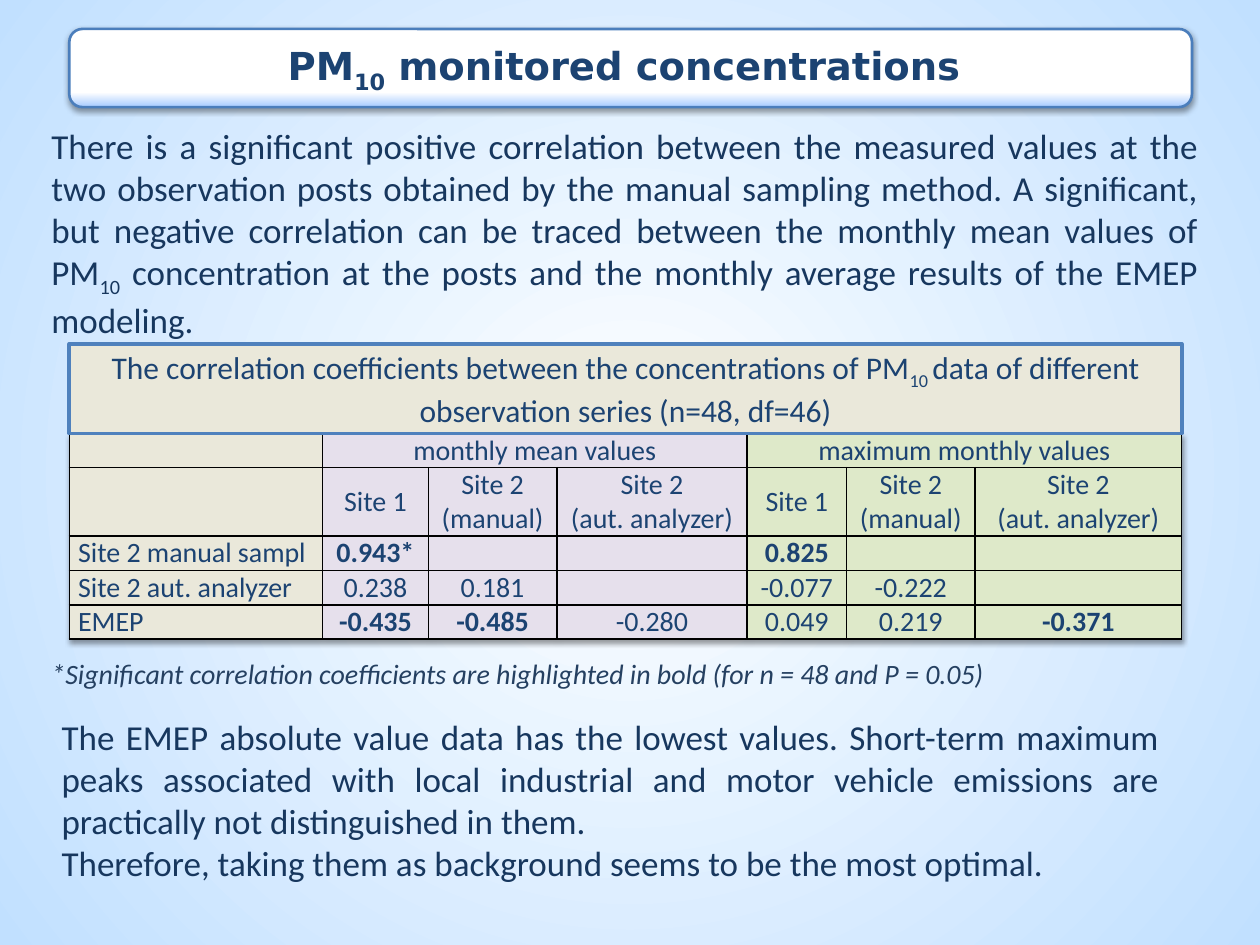
from lxml import etree
from pptx import Presentation
from pptx.dml.color import RGBColor
from pptx.enum.shapes import MSO_SHAPE as Shape
from pptx.enum.text import MSO_ANCHOR as Anchor, MSO_AUTO_SIZE as AutoSize, PP_ALIGN as Align
from pptx.oxml import parse_xml
from pptx.oxml.ns import nsdecls, qn
from pptx.util import Inches, Pt

NAVY, INK, NOTE = "1C4372", "17375E", "254061"
BEIGE, LILAC, GREEN = "EAE8DA", "E6E0EC", "DEE9C9"
COLUMN_FILLS = [BEIGE] + [LILAC] * 3 + [GREEN] * 3
COLUMN_WIDTHS = [2.01, 0.84, 1.02, 1.51, 0.79, 1.02, 1.64]
ROW_HEIGHTS = [0.27, 0.54, 0.27, 0.27, 0.27]
SITES = ["Site 1", "Site 2\n(manual)", "Site 2\n(aut. analyzer)"]
ROWS = [
    ["", "monthly mean values", "", "", "maximum monthly values", "", ""],
    [""] + SITES * 2,
    ["Site 2 manual sampl", "0.943*", "", "", "0.825", "", ""],
    ["Site 2 aut. analyzer", "0.238", "0.181", "", "-0.077", "-0.222", ""],
    ["EMEP", "-0.435", "-0.485", "-0.280", "0.049", "0.219", "-0.371"],
]
SIGNIFICANT = {"0.943*", "0.825", "-0.435", "-0.485", "-0.371"}


def rgb(value):
    """Turn a hex string into a colour."""
    return RGBColor.from_string(value)


def add_run(paragraph, text, size, color, font="Calibri", bold=False, italic=False, subscript=False):
    """Add one formatted run to a paragraph."""
    run = paragraph.add_run()
    run.text = text
    run.font.size, run.font.name = Pt(size), font
    run.font.bold, run.font.italic = bold, italic
    run.font.color.rgb = rgb(color)
    if subscript:
        run.font._element.set("baseline", "-25000")


def add_subscripted(paragraph, parts, *style, **options):
    """Add runs in which every second part is a subscript."""
    for index, part in enumerate(parts):
        add_run(paragraph, part, *style, subscript=index % 2 == 1, **options)


def fill_gradient(fill, stops):
    """Give a fill a gradient of two (position, colour) stops."""
    fill.gradient()
    for stop, (position, color) in zip(fill.gradient_stops, stops):
        stop.position, stop.color.rgb = position, rgb(color)


def soft_shadow():
    """Make a soft shadow that falls downwards."""
    return parse_xml(
        f'<a:effectLst {nsdecls("a")}><a:outerShdw blurRad="{Pt(3.1)}" dist="{Pt(1.6)}" '
        'dir="5400000" rotWithShape="0"><a:srgbClr val="000000"><a:alpha val="38000"/>'
        "</a:srgbClr></a:outerShdw></a:effectLst>")


def paint_background(slide):
    """Paint a glow that spreads from the middle of the slide."""
    fill_gradient(slide.background.fill, [(0, "FFFFFF"), (1, "C1E0FF")])
    linear = next(slide.element.iter(qn("a:lin")))
    glow = parse_xml(f'<a:path {nsdecls("a")} path="circle">'
                     '<a:fillToRect l="50000" t="50000" r="50000" b="50000"/></a:path>')
    linear.getparent().replace(linear, glow)


def add_panel(slide, kind, box, line_color, line_width):
    """Add an outlined shape with centred text and return it with its paragraph."""
    shape = slide.shapes.add_shape(kind, *map(Inches, box))
    shape.shadow.inherit = False
    shape.line.color.rgb, shape.line.width = rgb(line_color), Pt(line_width)
    shape.text_frame.word_wrap = True
    shape.text_frame.vertical_anchor = Anchor.MIDDLE
    paragraph = shape.text_frame.paragraphs[0]
    paragraph.alignment = Align.CENTER
    return shape, paragraph


def add_title(slide, box):
    """Add the rounded title bar."""
    shape, paragraph = add_panel(slide, Shape.ROUNDED_RECTANGLE, box, "4B7EBC", 1.5)
    fill_gradient(shape.fill, [(0, "A7CBFF"), (0.19, "FFFFFF")])
    shape.fill.gradient_angle = 90
    properties = shape.element.spPr
    properties.replace(properties.find(qn("a:effectLst")), soft_shadow())
    paragraph.line_spacing = 0.8
    add_subscripted(paragraph, ["PM", "10", " monitored concentrations "], 22, NAVY,
                    font="DejaVu Sans", bold=True)


def add_caption(slide, box):
    """Add the heading band of the table."""
    shape, paragraph = add_panel(slide, Shape.RECTANGLE, box, "4F81BD", 2)
    shape.fill.solid()
    shape.fill.fore_color.rgb = rgb(BEIGE)
    add_subscripted(paragraph, [
        "The correlation coefficients between the concentrations of PM", "10 ",
        "data of different observation series (n=48, df=46)"], 18, NAVY)


def add_text(slide, box, paragraphs, size, color, italic=False):
    """Add a text box from (alignment, parts) paragraphs."""
    frame = slide.shapes.add_textbox(*map(Inches, box)).text_frame
    frame.word_wrap, frame.auto_size = True, AutoSize.SHAPE_TO_FIT_TEXT
    for index, (alignment, parts) in enumerate(paragraphs):
        paragraph = frame.add_paragraph() if index else frame.paragraphs[0]
        paragraph.alignment = alignment
        add_subscripted(paragraph, parts, size, color, italic=italic)


def style_cell(cell, text, fill, alignment):
    """Write, fill and border one table cell."""
    cell.vertical_anchor = Anchor.MIDDLE
    cell.margin_left = cell.margin_right = Inches(0.07)
    cell.margin_top = cell.margin_bottom = 0
    for index, line in enumerate(text.split("\n")):
        frame = cell.text_frame
        paragraph = frame.add_paragraph() if index else frame.paragraphs[0]
        paragraph.alignment = alignment
        if line:
            add_run(paragraph, line, 16, NAVY, bold=line in SIGNIFICANT)
        else:
            etree.SubElement(paragraph._p, qn("a:endParaRPr"), sz="1600")
    properties = cell._tc.get_or_add_tcPr()
    for side in ("L", "R", "T", "B"):
        properties.append(parse_xml(
            f'<a:ln{side} {nsdecls("a")} w="{Pt(1)}"><a:solidFill>'
            f'<a:srgbClr val="000000"/></a:solidFill></a:ln{side}>'))
    cell.fill.solid()
    cell.fill.fore_color.rgb = rgb(fill)


def add_correlations(slide, box):
    """Add the table of correlation coefficients."""
    table = slide.shapes.add_table(len(ROWS), len(COLUMN_WIDTHS), *map(Inches, box)).table
    table.first_row = table.horz_banding = False
    table._tbl.tblPr.insert(0, soft_shadow())
    for column, width in zip(table.columns, COLUMN_WIDTHS):
        column.width = Inches(width)
    for row, height in zip(table.rows, ROW_HEIGHTS):
        row.height = Inches(height)
    for row, texts in enumerate(ROWS):
        for column, text in enumerate(texts):
            alignment = Align.CENTER if column else Align.LEFT
            style_cell(table.cell(row, column), text, COLUMN_FILLS[column], alignment)
    for start in (1, 4):
        table.cell(0, start).merge(table.cell(0, start + 2))


def main():
    """Build and save the slide."""
    presentation = Presentation()
    presentation.slide_width, presentation.slide_height = Inches(10), Inches(7.5)
    slide = presentation.slides.add_slide(presentation.slide_layouts[6])
    paint_background(slide)
    add_title(slide, (0.55, 0.23, 8.91, 0.62))
    add_correlations(slide, (0.55, 3.44, 8.83, 1.62))
    add_caption(slide, (0.55, 2.73, 8.83, 0.71))
    add_text(slide, (0.31, 0.94, 9.3, 1.78), [(Align.JUSTIFY, [
        "There is a significant positive correlation between the measured values at the two "
        "observation posts obtained by the manual sampling method. A significant, but negative "
        "correlation can be traced between the monthly mean values of PM", "10",
        " concentration at the posts and the monthly average results of the EMEP modeling."])],
        20, INK)
    add_text(slide, (0.39, 5.63, 8.91, 1.45), [
        (Align.JUSTIFY, [
            "The EMEP absolute value data has the lowest values. Short-term maximum peaks "
            "associated with local industrial and motor vehicle emissions are practically not "
            "distinguished in them."]),
        (Align.LEFT, ["Therefore, taking them as background seems to be the most optimal."])],
        20, INK)
    add_text(slide, (0.31, 5.16, 8.91, 0.37), [(Align.LEFT, [
        "*Significant correlation coefficients are highlighted in bold (for n = 48 and P = 0.05)"])],
        16, NOTE, italic=True)
    presentation.save("out.pptx")


if __name__ == "__main__":
    main()
